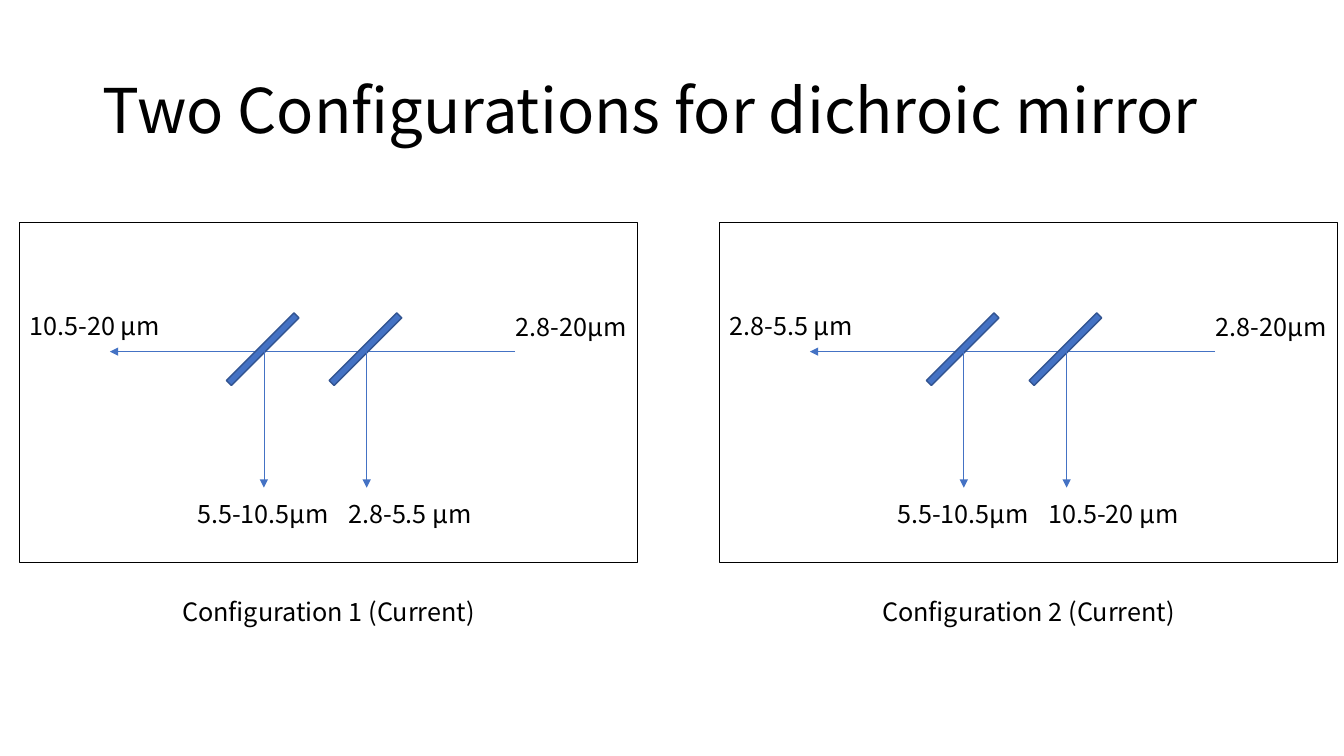
"""Build a slide comparing two dichroic mirror configurations."""
import lxml.etree
import pptx
import pptx.dml.color
import pptx.enum.shapes
import pptx.enum.text
import pptx.oxml.ns
import pptx.util
from pptx.util import Cm

FONT = "Noto Sans CJK JP"
BLACK = pptx.dml.color.RGBColor(0x00, 0x00, 0x00)
BLUE = pptx.dml.color.RGBColor(0x44, 0x72, 0xC4)
DARK_BLUE = pptx.dml.color.RGBColor(0x32, 0x54, 0x91)

PANEL_WIDTH, PANEL_HEIGHT = Cm(15.57), Cm(8.56)
PANEL_TOP = Cm(5.61)
FIRST_PANEL_LEFT, PANEL_PITCH = Cm(0.5), Cm(17.64)
BEAM_DROP = Cm(3.25)
MIRROR_WIDTH, MIRROR_HEIGHT = Cm(0.18), Cm(2.41)
LABEL_HEIGHT = Cm(1.03)

CONFIGURATIONS = [
    ("Configuration 1 (Current)", "10.5-20 µm", "2.8-5.5 µm"),
    ("Configuration 2 (Current)", "2.8-5.5 µm", "10.5-20 µm"),
]


def add_text(slide, left, top, width, height, text, size=18):
    """Add a text box in the slide font and return it."""
    box = slide.shapes.add_textbox(left, top, width, height)
    box.text_frame.text = text
    box.text_frame.word_wrap = False
    font = box.text_frame.paragraphs[0].runs[0].font
    font.name = FONT
    font.size = pptx.util.Pt(size)
    font.color.rgb = BLACK
    return box


def add_title(slide, left, top, width, height):
    """Add the slide title, centred vertically in its box."""
    box = add_text(slide, left, top, width, height,
                   "Two Configurations for dichroic mirror", 44)
    box.text_frame.word_wrap = True
    box.text_frame.vertical_anchor = pptx.enum.text.MSO_ANCHOR.MIDDLE
    box.text_frame.paragraphs[0].line_spacing = 0.9


def add_arrow(slide, start_x, start_y, end_x, end_y):
    """Add a thin light ray with a triangular head at its end."""
    ray = slide.shapes.add_connector(
        pptx.enum.shapes.MSO_CONNECTOR.STRAIGHT, start_x, start_y, end_x, end_y)
    ray.line.color.rgb = BLUE
    ray.line.width = pptx.util.Pt(0.5)
    properties = ray._element.spPr
    outline = properties.find(pptx.oxml.ns.qn("a:ln"))
    lxml.etree.SubElement(outline, pptx.oxml.ns.qn("a:tailEnd"), type="triangle")
    lxml.etree.SubElement(properties, pptx.oxml.ns.qn("a:effectLst"))


def add_rectangle(slide, left, top, width, height, line_color):
    """Add an unfilled, unshadowed rectangle and return it."""
    rectangle = slide.shapes.add_shape(
        pptx.enum.shapes.MSO_SHAPE.RECTANGLE, left, top, width, height)
    rectangle.shadow.inherit = False
    rectangle.fill.background()
    rectangle.line.color.rgb = line_color
    rectangle.line.width = pptx.util.Pt(1)
    return rectangle


def add_mirror(slide, center_x, beam_y):
    """Add a tilted mirror on the beam and the ray it reflects downwards."""
    mirror = add_rectangle(
        slide, center_x - MIRROR_WIDTH // 2,
        beam_y - Cm(0.06) - MIRROR_HEIGHT // 2,
        MIRROR_WIDTH, MIRROR_HEIGHT, DARK_BLUE)
    mirror.fill.solid()
    mirror.fill.fore_color.rgb = BLUE
    mirror.rotation = 45
    ray_x = center_x + Cm(0.03)
    add_arrow(slide, ray_x, beam_y - Cm(0.12), ray_x, beam_y + Cm(3.43))


def add_configuration(slide, left, top, width, height, caption, passed, reflected):
    """Add one framed optical layout with its caption below."""
    beam_y = top + BEAM_DROP
    add_arrow(slide, left + Cm(12.48), beam_y, left + Cm(2.27), beam_y)
    for mirror_x in (Cm(8.71), Cm(6.12)):
        add_mirror(slide, left + mirror_x, beam_y)
    labels = [
        (Cm(12.25), Cm(2.11), Cm(3.3), "2.8-20µm"),
        (Cm(0), Cm(2.09), Cm(3.84), passed),
        (Cm(4.22), Cm(6.83), Cm(3.84), "5.5-10.5µm"),
        (Cm(8.03), Cm(6.83), Cm(3.84), reflected),
        (Cm(3.84), height + Cm(0.74), Cm(8.1), caption),
    ]
    for label_x, label_y, label_width, text in labels:
        add_text(slide, left + label_x, top + label_y,
                 label_width, LABEL_HEIGHT, text)
    add_rectangle(slide, left, top, width, height, BLACK)


def main():
    """Create the deck and save it."""
    deck = pptx.Presentation()
    deck.slide_width = Cm(33.87)
    deck.slide_height = Cm(19.05)
    slide = deck.slides.add_slide(deck.slide_layouts[6])
    add_title(slide, Cm(2.34), Cm(1.02), Cm(29.21), Cm(3.68))
    for index, texts in enumerate(CONFIGURATIONS):
        add_configuration(slide, FIRST_PANEL_LEFT + index * PANEL_PITCH,
                          PANEL_TOP, PANEL_WIDTH, PANEL_HEIGHT, *texts)
    deck.save("out.pptx")


if __name__ == "__main__":
    main()
